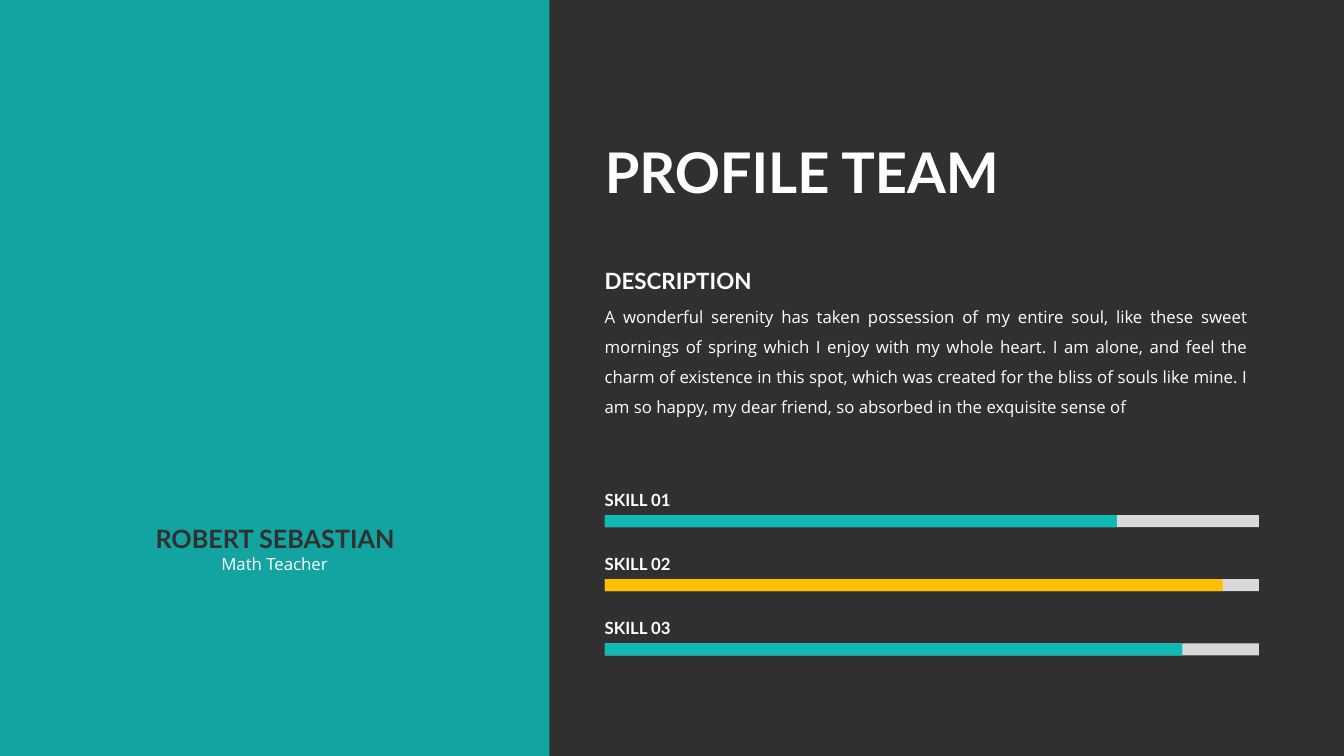
from lxml.etree import SubElement
from pptx import Presentation
from pptx.dml.color import RGBColor
from pptx.enum.shapes import MSO_SHAPE as Preset
from pptx.enum.text import MSO_ANCHOR as Anchor, MSO_AUTO_SIZE as AutoSize, PP_ALIGN as Align
from pptx.oxml.ns import qn
from pptx.util import Pt

COLORS = {
    "dark": "303030",
    "teal": "0FB9B5",
    "amber": "FFC000",
    "track": "D9D9D9",
    "white": "FFFFFF",
}
HEADING_FONT = "Lato"
BODY_FONT = "Open Sans"
TEXT_LEFT = 424.8
BAR_LEFT, BAR_WIDTH, BAR_HEIGHT = 432, 467.3, 8.64
SKILL_TOP, SKILL_PITCH, BAR_OFFSET = 346.2, 45.8, 21.7
SKILLS = [
    ("SKILL 01", 365.8, "teal"),
    ("SKILL 02", 441.4, "amber"),
    ("SKILL 03", 412.6, "teal"),
]
DESCRIPTION = (
    "A wonderful serenity has taken possession of my entire soul, like these sweet "
    "mornings of spring which I enjoy with my whole heart. I am alone, and feel the "
    "charm of existence in this spot, which was created for the bliss of souls like mine. "
    "I am so happy, my dear friend, so absorbed in the exquisite sense of"
)


def rgb(color):
    return RGBColor.from_string(COLORS[color])


def place(element, left, top, width, height):
    element.left, element.top = Pt(left), Pt(top)
    element.width, element.height = Pt(width), Pt(height)


def write(paragraph, text, size, font, color="white", bold=False):
    run = paragraph.add_run()
    run.text = text
    run.font.size = Pt(size)
    run.font.name = font
    run.font.bold = bold
    run.font.color.rgb = rgb(color)


def add_title(slide, text):
    title = slide.shapes.title
    place(title, TEXT_LEFT, 95, 649.4, 60.5)
    frame = title.text_frame
    frame.word_wrap = True
    frame.auto_size = AutoSize.SHAPE_TO_FIT_TEXT
    frame.vertical_anchor = Anchor.MIDDLE
    frame.margin_left = frame.margin_right = Pt(7.2)
    frame.margin_top = frame.margin_bottom = Pt(8.64)
    heading = frame.paragraphs[0]
    heading.alignment = Align.LEFT
    heading.line_spacing = 0.9
    write(heading, text, 40, HEADING_FONT, bold=True)


def add_text(slide, box, text, size, font, color="white", bold=False,
             align=Align.LEFT, wrap=False, spacing=None):
    label = slide.shapes.add_textbox(*map(Pt, box))
    frame = label.text_frame
    frame.word_wrap = wrap
    frame.auto_size = AutoSize.SHAPE_TO_FIT_TEXT
    paragraph = frame.paragraphs[0]
    paragraph.alignment = align
    if spacing:
        paragraph.line_spacing = spacing
    write(paragraph, text, size, font, color, bold)


def add_block(slide, box, color, opacity=100):
    block = slide.shapes.add_shape(Preset.RECTANGLE, *map(Pt, box))
    block.shadow.inherit = False
    block.fill.solid()
    block.fill.fore_color.rgb = rgb(color)
    block.line.fill.background()
    if opacity < 100:
        fill_color = block.fill._xPr.find(qn("a:solidFill"))[0]
        SubElement(fill_color, qn("a:alpha")).set("val", str(opacity * 1000))


def add_skill(slide, top, name, level, color):
    bar_top = top + BAR_OFFSET
    add_block(slide, (BAR_LEFT, bar_top, BAR_WIDTH, BAR_HEIGHT), "track")
    add_block(slide, (BAR_LEFT, bar_top, level, BAR_HEIGHT), color)
    add_text(slide, (TEXT_LEFT, top, 62.6, 21.6), name, 12, HEADING_FONT, bold=True)


def main():
    deck = Presentation()
    deck.slide_width, deck.slide_height = Pt(960), Pt(540)
    slide = deck.slides.add_slide(deck.slide_layouts[5])
    slide.background.fill.solid()
    slide.background.fill.fore_color.rgb = rgb("dark")

    add_block(slide, (0, 0, 392.4, 540), "teal", opacity=85)
    add_title(slide, "PROFILE TEAM")
    add_text(slide, (TEXT_LEFT, 187.2, 121, 26.6), "DESCRIPTION", 16, HEADING_FONT, bold=True)
    add_text(slide, (TEXT_LEFT, 208.1, 473.8, 92.2), DESCRIPTION, 12, BODY_FONT,
             align=Align.JUSTIFY, wrap=True, spacing=1.5)
    add_text(slide, (102.2, 370.1, 188.6, 28.8), "ROBERT SEBASTIAN", 18, HEADING_FONT,
             color="dark", bold=True, align=Align.CENTER)
    add_text(slide, (150.5, 391.7, 91.4, 21.6), "Math Teacher", 12, BODY_FONT,
             align=Align.CENTER)
    for row, skill in enumerate(SKILLS):
        add_skill(slide, SKILL_TOP + row * SKILL_PITCH, *skill)

    deck.save("out.pptx")


if __name__ == "__main__":
    main()
